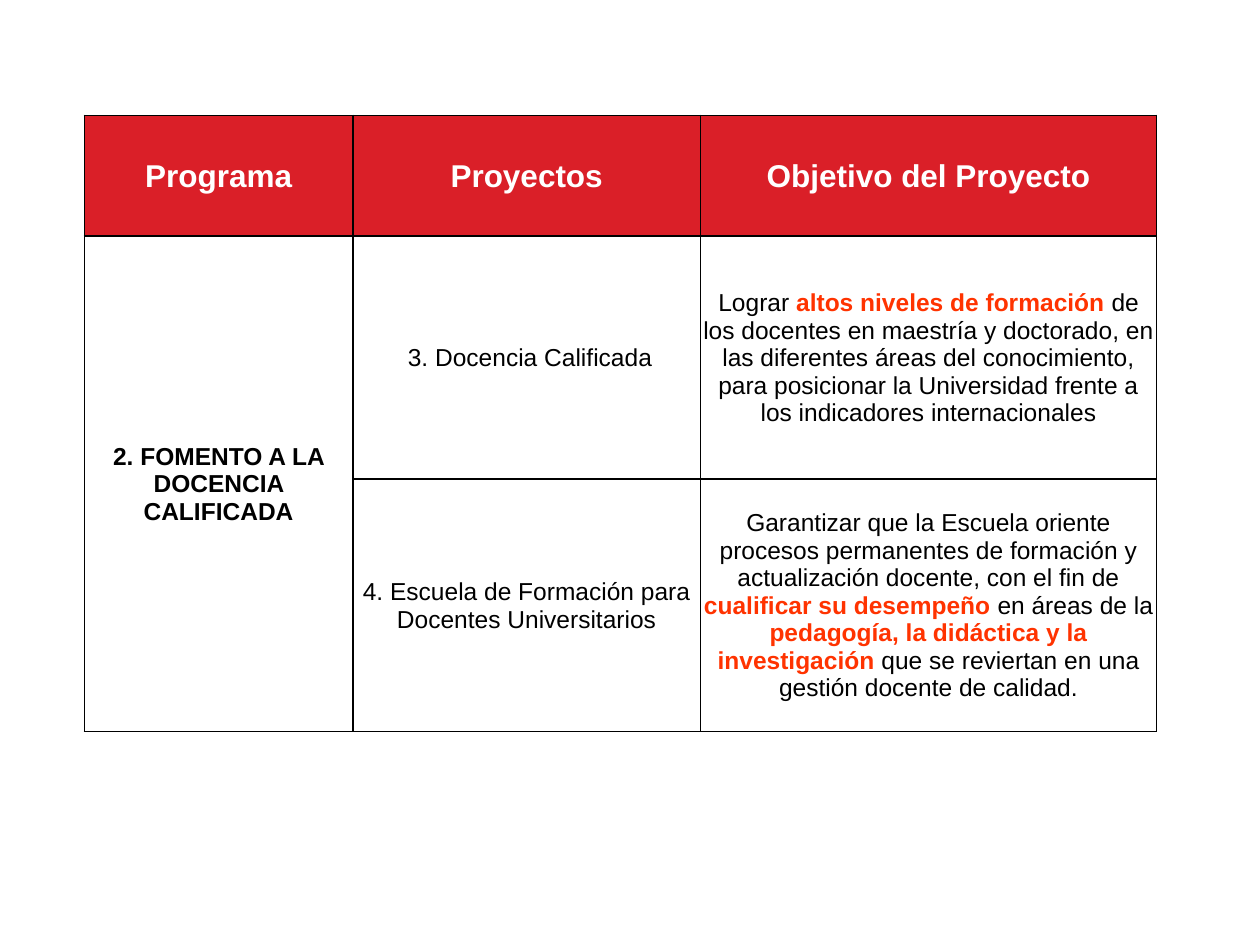
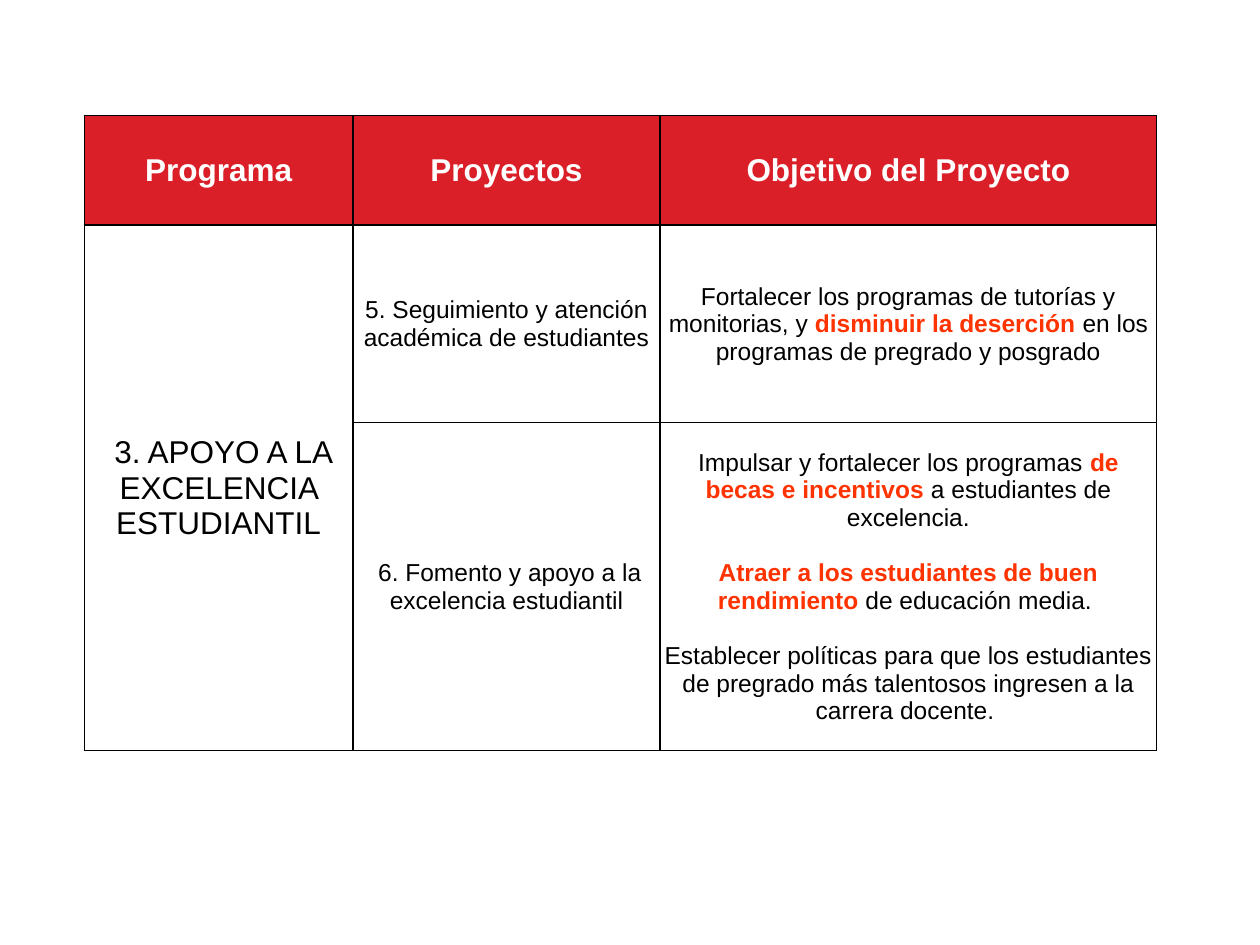
from lxml.etree import SubElement
from pptx import Presentation
from pptx.dml.color import RGBColor
from pptx.enum.text import MSO_ANCHOR as Anchor, PP_ALIGN as Align
from pptx.oxml.ns import qn
from pptx.util import Inches, Pt

COLORS = {"header": "DA1F28", "body": "FFFFFF", "white": "FFFFFF",
          "black": "000000", "accent": "FF3300"}
HEADINGS = ["Programa", "Proyectos", "Objetivo del Proyecto"]
HEADING_FORMAT = {"size": Pt(18), "bold": True}
TEXT_FORMAT = {"size": Pt(14), "bold": False}
CELL_FORMAT = {"margin_left": Inches(0.01), "margin_right": Inches(0.01),
               "margin_top": Inches(0.01), "margin_bottom": 0,
               "vertical_anchor": Anchor.MIDDLE}
TABLE_LEFT, TABLE_TOP = 6.7, 12.2

PROGRAMS = [
    {"columns": [21.3, 27.6, 36.2], "rows": [12.8, 25.7, 26.7],
     "name": "2. FOMENTO A LA DOCENCIA CALIFICADA",
     "name_format": {"size": Pt(14), "bold": True},
     "projects": [
         (" 3. Docencia Calificada",
          ["Lograr *altos niveles de formación *de los docentes en maestría y doctorado, "
           "en las diferentes áreas del conocimiento, para posicionar la Universidad "
           "frente a los indicadores internacionales"]),
         ("4. Escuela de Formación para Docentes Universitarios",
          ["Garantizar que la Escuela oriente procesos permanentes de formación y "
           "actualización docente, con el fin de *cualificar su desempeño *en áreas de la "
           "*pedagogía, la didáctica y la investigación *que se reviertan en una gestión "
           "docente de calidad."])]},
    {"columns": [21.3, 24.4, 39.4], "rows": [11.6, 20.9, 34.7],
     "name": " 3. APOYO A LA EXCELENCIA ESTUDIANTIL",
     "name_format": {"size": Pt(18), "bold": False},
     "projects": [
         ("5. Seguimiento y atención académica de estudiantes",
          ["Fortalecer los programas de tutorías y monitorias, y *disminuir la deserción *"
           "en los programas de pregrado y posgrado"]),
         (" 6. Fomento y apoyo a la excelencia estudiantil",
          ["Impulsar y fortalecer los programas *de becas e incentivos* a estudiantes de "
           "excelencia.",
           "*Atraer a los estudiantes de buen rendimiento *de educación media. ",
           "Establecer políticas para que los estudiantes de pregrado más talentosos "
           "ingresen a la carrera docente. "])]},
]


def style_cell(cell, fill):
    for name, value in CELL_FORMAT.items():
        setattr(cell, name, value)
    properties = cell._tc.get_or_add_tcPr()
    for side in ("a:lnL", "a:lnR", "a:lnT", "a:lnB"):
        line = SubElement(properties, qn(side), w=str(Pt(1)))
        line_fill = SubElement(line, qn("a:solidFill"))
        SubElement(line_fill, qn("a:srgbClr"), val=COLORS["black"])
    cell.fill.solid()
    cell.fill.fore_color.rgb = RGBColor.from_string(COLORS[fill])


def write_cell(cell, texts, font_format, color):
    frame = cell.text_frame
    for index, text in enumerate(texts):
        paragraph = frame.add_paragraph() if index else frame.paragraphs[0]
        paragraph.alignment = Align.CENTER
        if index:
            paragraph.space_before = Pt(16)
        for part, words in enumerate(text.split("*")):
            if not words:
                continue
            run = paragraph.add_run()
            run.text = words
            run.font.name = "Arial"
            for name, value in font_format.items():
                setattr(run.font, name, value)
            if part % 2:
                run.font.bold = True
            run.font.color.rgb = RGBColor.from_string(COLORS["accent" if part % 2 else color])


presentation = Presentation()
presentation.slide_width = Inches(10)
presentation.slide_height = Inches(7.5)
width_percent = presentation.slide_width / 100
height_percent = presentation.slide_height / 100

for program in PROGRAMS:
    slide = presentation.slides.add_slide(presentation.slide_layouts[6])
    shape = slide.shapes.add_table(
        len(program["rows"]), len(program["columns"]),
        int(TABLE_LEFT * width_percent), int(TABLE_TOP * height_percent),
        int(sum(program["columns"]) * width_percent),
        int(sum(program["rows"]) * height_percent))
    table = shape.table
    table.first_row = table.horz_banding = False
    for column, share in zip(table.columns, program["columns"]):
        column.width = int(share * width_percent)
    for row_index, share in enumerate(program["rows"]):
        table.rows[row_index].height = int(share * height_percent)
        for cell in table.rows[row_index].cells:
            style_cell(cell, "body" if row_index else "header")
    table.cell(1, 0).merge(table.cell(2, 0))

    for column_index, heading in enumerate(HEADINGS):
        write_cell(table.cell(0, column_index), [heading], HEADING_FORMAT, "white")
    write_cell(table.cell(1, 0), [program["name"]], program["name_format"], "black")
    for row_index, (project, goals) in enumerate(program["projects"], start=1):
        write_cell(table.cell(row_index, 1), [project], TEXT_FORMAT, "black")
        write_cell(table.cell(row_index, 2), goals, TEXT_FORMAT, "black")

presentation.save("out.pptx")
